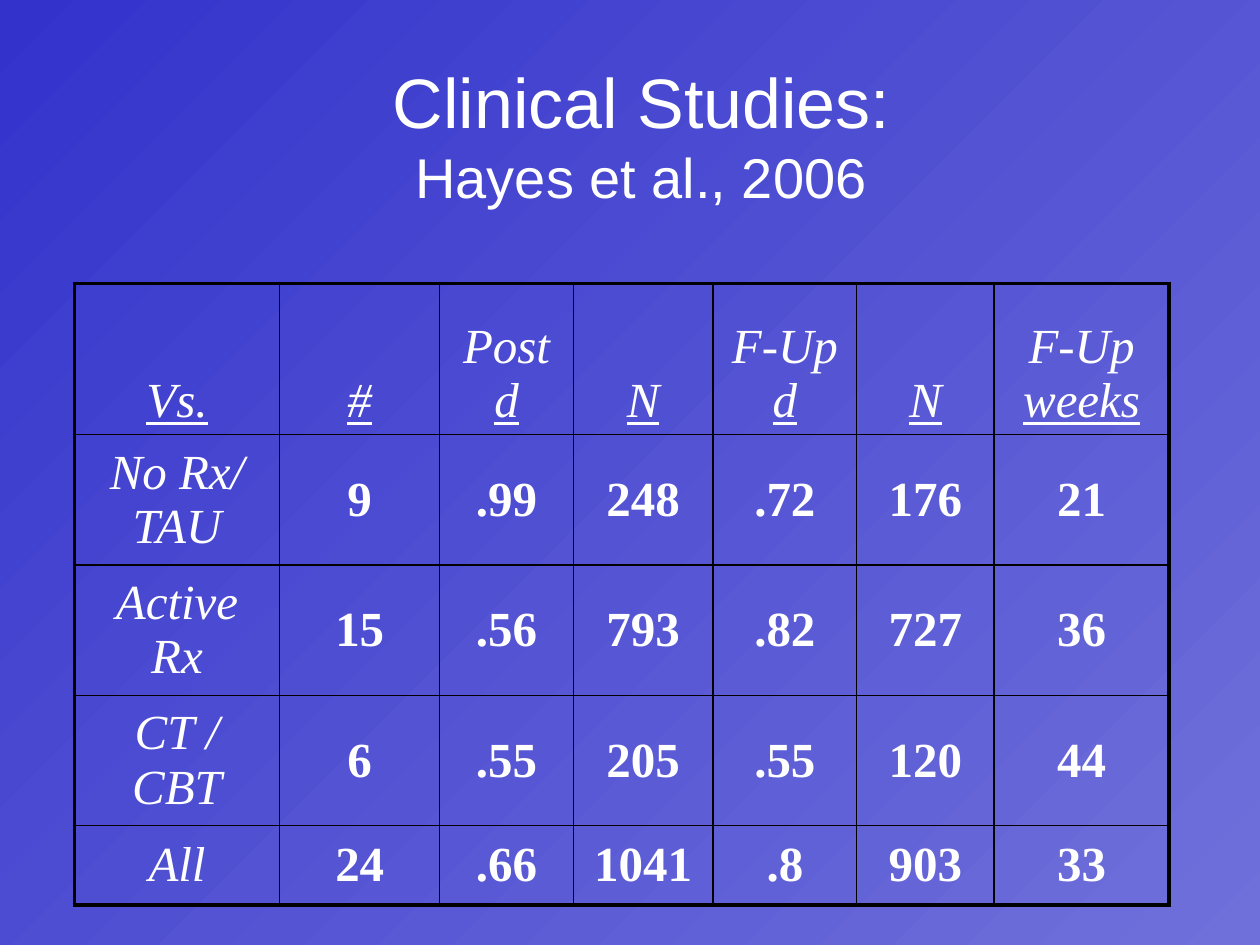
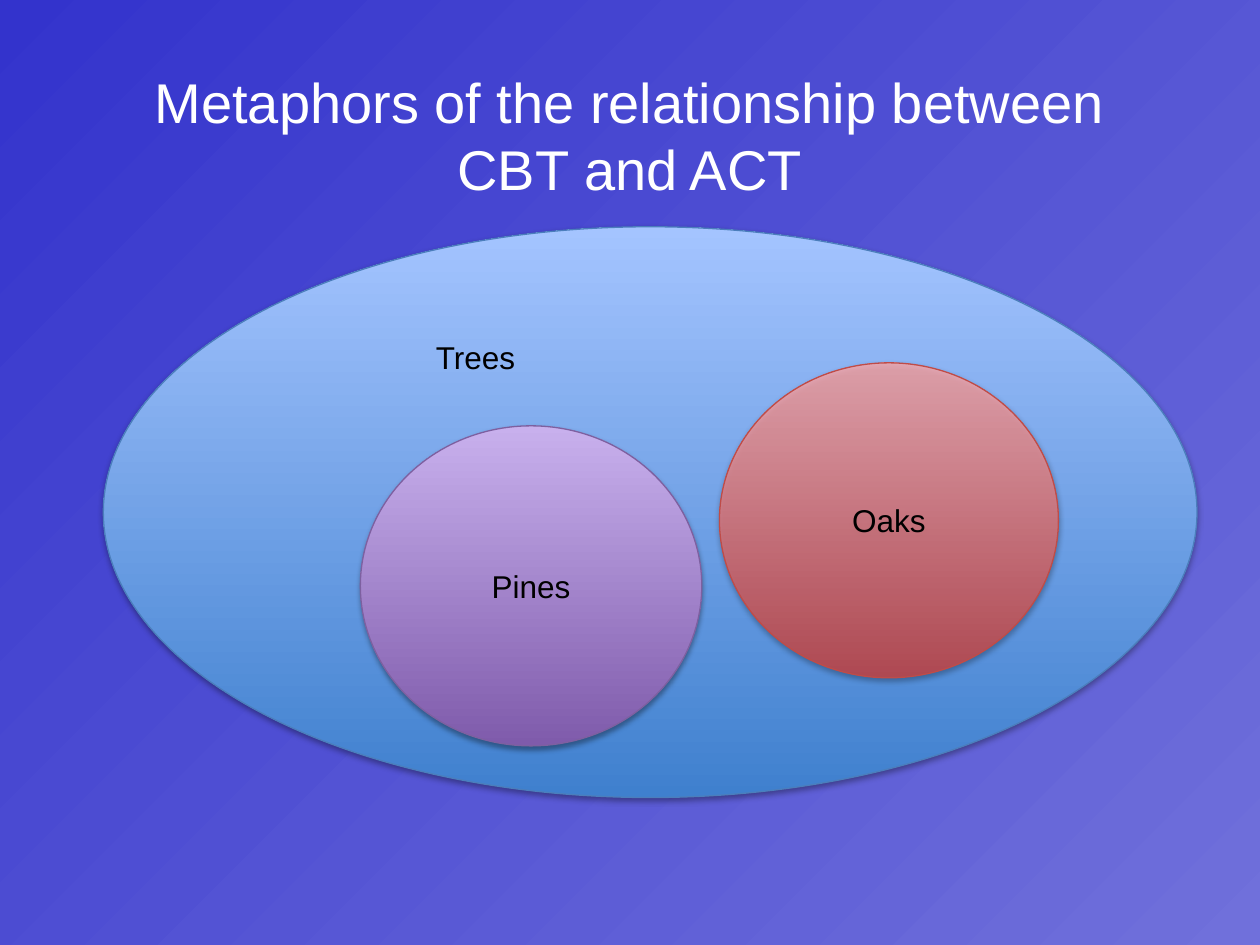
from dataclasses import dataclass

from lxml import etree
from pptx import Presentation
from pptx.dml.color import RGBColor
from pptx.enum.shapes import MSO_SHAPE
from pptx.enum.text import MSO_ANCHOR, PP_ALIGN
from pptx.oxml.ns import qn
from pptx.util import Inches, Pt

OVAL = MSO_SHAPE.OVAL
CENTER = PP_ALIGN.CENTER
MIDDLE = MSO_ANCHOR.MIDDLE
BOTTOM = MSO_ANCHOR.BOTTOM

COLORS = {
    "white": "FFFFFF",
    "black": "000000",
    "back_start": "3333CC",
    "back_end": "7070DB",
    "trees_low": "3F80CE",
    "trees_high": "A4C4FF",
    "trees_line": "4B7EBC",
    "pines_low": "7F5BAB",
    "pines_high": "C8B0ED",
    "pines_line": "7D60A0",
    "oaks_low": "D1403C",
    "oaks_high": "FFA6A5",
    "oaks_line": "BF4C48",
}

SANS = {"name": "Arial"}
SERIF = {"name": "Times New Roman", "size": Pt(28)}
TITLE_LARGE = {**SANS, "size": Pt(40)}
TITLE = {**SANS, "size": Pt(32)}
LABEL = {**SANS, "size": Pt(18)}
HEADING = {**SERIF, "italic": True, "bold": False}
HEADING_UNDERLINED = {**HEADING, "underline": True}
VALUE = {**SERIF, "italic": False, "bold": True}

COLUMN_WIDTHS = [1.63, 1.27, 1.06, 1.11, 1.14, 1.09, 1.39]
ROW_HEIGHTS = [1.2, 1.03, 1.03, 1.03, 0.63]
HEADERS = [
    ("", "Vs."),
    ("", "#"),
    ("Post ", "d"),
    ("", "N"),
    ("F-Up ", "d"),
    ("", "N"),
    ("F-Up ", "weeks"),
]
STUDIES = [
    ["No Rx/ TAU", "9", ".99", "248", ".72", "176", "21"],
    ["Active Rx", "15", ".56", "793", ".82", "727", "36"],
    ["CT / CBT", "6", ".55", "205", ".55", "120", "44"],
    ["All", "24", ".66", "1041", ".8", "903", "33"],
]
INNER_BORDER = Pt(1)
OUTER_BORDER = Pt(2.25)


@dataclass
class Span:
    text: str
    font: dict
    color: str = "white"


@dataclass
class Frame:
    left: float
    top: float
    width: float
    height: float

    def lengths(self) -> list:
        return [Inches(side) for side in (self.left, self.top, self.width, self.height)]


@dataclass
class Ellipse:
    frame: Frame
    palette: str
    label: str = ""
    opacity: int = 100


ELLIPSES = [
    Ellipse(Frame(0.82, 1.8, 8.68, 4.53), "trees"),
    Ellipse(Frame(2.86, 3.38, 2.71, 2.54), "pines", "Pines"),
    Ellipse(Frame(5.71, 2.88, 2.69, 2.5), "oaks", "Oaks", 76),
]


def rgb(name: str) -> RGBColor:
    return RGBColor.from_string(COLORS[name])


def fill_gradient(fill, start: str, end: str, angle: int) -> None:
    fill.gradient()
    fill.gradient_angle = angle
    for stop, name in zip(fill.gradient_stops, (start, end)):
        stop.color.rgb = rgb(name)


def write_spans(para, spans: list[Span]) -> None:
    para.alignment = CENTER
    for item in spans:
        span = para.add_run()
        span.text = item.text
        for attribute, value in item.font.items():
            setattr(span.font, attribute, value)
        span.font.color.rgb = rgb(item.color)


def write_lines(text_frame, lines: list[Span]) -> None:
    text_frame.word_wrap = True
    text_frame.vertical_anchor = MIDDLE
    for index, line in enumerate(lines):
        para = text_frame.add_paragraph() if index else text_frame.paragraphs[0]
        write_spans(para, [line])


def add_text(page, frame: Frame, lines: list[Span]) -> None:
    box = page.shapes.add_textbox(*frame.lengths())
    write_lines(box.text_frame, lines)


def add_page(deck):
    page = deck.slides.add_slide(deck.slide_layouts[6])
    fill_gradient(page.background.fill, "back_start", "back_end", 315)
    return page


def add_shadow(shape) -> None:
    shape.shadow.inherit = False
    effects = shape.element.spPr.find(qn("a:effectLst"))
    shadow = etree.SubElement(
        effects,
        qn("a:outerShdw"),
        blurRad=str(Pt(3.1)),
        dist=str(Pt(1.8)),
        dir="5400000",
        rotWithShape="0",
    )
    color = etree.SubElement(shadow, qn("a:srgbClr"), val=COLORS["black"])
    etree.SubElement(color, qn("a:alpha"), val="35000")


def add_ellipse(page, ellipse: Ellipse) -> None:
    shape = page.shapes.add_shape(OVAL, *ellipse.frame.lengths())
    fill_gradient(shape.fill, f"{ellipse.palette}_low", f"{ellipse.palette}_high", 90)
    if ellipse.opacity < 100:
        for color in shape.element.spPr.iter(qn("a:srgbClr")):
            etree.SubElement(color, qn("a:alpha"), val=str(ellipse.opacity * 1000))
    shape.line.color.rgb = rgb(f"{ellipse.palette}_line")
    shape.line.width = Pt(0.75)
    add_shadow(shape)
    if ellipse.label:
        write_lines(shape.text_frame, [Span(ellipse.label, LABEL, "black")])


def set_borders(cell, row: int, column: int) -> None:
    outer_sides = {
        "a:lnL": column == 0,
        "a:lnR": column == len(COLUMN_WIDTHS) - 1,
        "a:lnT": row == 0,
        "a:lnB": row == len(ROW_HEIGHTS) - 1,
    }
    properties = cell._tc.get_or_add_tcPr()
    for tag, is_outer in outer_sides.items():
        width = OUTER_BORDER if is_outer else INNER_BORDER
        border = etree.SubElement(properties, qn(tag), w=str(width))
        solid = etree.SubElement(border, qn("a:solidFill"))
        etree.SubElement(solid, qn("a:srgbClr"), val=COLORS["black"])


def cell_spans(row: int, column: int) -> list[Span]:
    if row == 0:
        plain, underlined = HEADERS[column]
        spans = [Span(plain, HEADING), Span(underlined, HEADING_UNDERLINED)]
        return [span for span in spans if span.text]
    return [Span(STUDIES[row - 1][column], VALUE if column else HEADING)]


def add_study_table(page, frame: Frame) -> None:
    shape = page.shapes.add_table(len(ROW_HEIGHTS), len(COLUMN_WIDTHS), *frame.lengths())
    table = shape.table
    table.first_row = False
    table.horz_banding = False
    for column, width in zip(table.columns, COLUMN_WIDTHS):
        column.width = Inches(width)
    for row, height in enumerate(ROW_HEIGHTS):
        table.rows[row].height = Inches(height)
        for column in range(len(COLUMN_WIDTHS)):
            cell = table.cell(row, column)
            set_borders(cell, row, column)
            cell.fill.background()
            cell.vertical_anchor = MIDDLE if row else BOTTOM
            write_spans(cell.text_frame.paragraphs[0], cell_spans(row, column))


def build_studies(deck) -> None:
    page = add_page(deck)
    add_text(
        page,
        Frame(0.59, 0.44, 9, 1.25),
        [Span("Clinical Studies:", TITLE_LARGE), Span("Hayes et al., 2006", TITLE)],
    )
    add_study_table(page, Frame(0.59, 2.25, sum(COLUMN_WIDTHS), sum(ROW_HEIGHTS)))


def build_metaphors(deck) -> None:
    page = add_page(deck)
    for ellipse in ELLIPSES:
        add_ellipse(page, ellipse)
    add_text(page, Frame(2.19, 2.63, 3.17, 0.4), [Span("Trees", LABEL, "black")])
    add_text(
        page,
        Frame(0.75, 0.44, 8.5, 1.25),
        [Span("Metaphors of the relationship between CBT and ACT", TITLE)],
    )


def main() -> None:
    deck = Presentation()
    deck.slide_width = Inches(10)
    deck.slide_height = Inches(7.5)
    build_studies(deck)
    build_metaphors(deck)
    deck.save("out.pptx")


if __name__ == "__main__":
    main()
